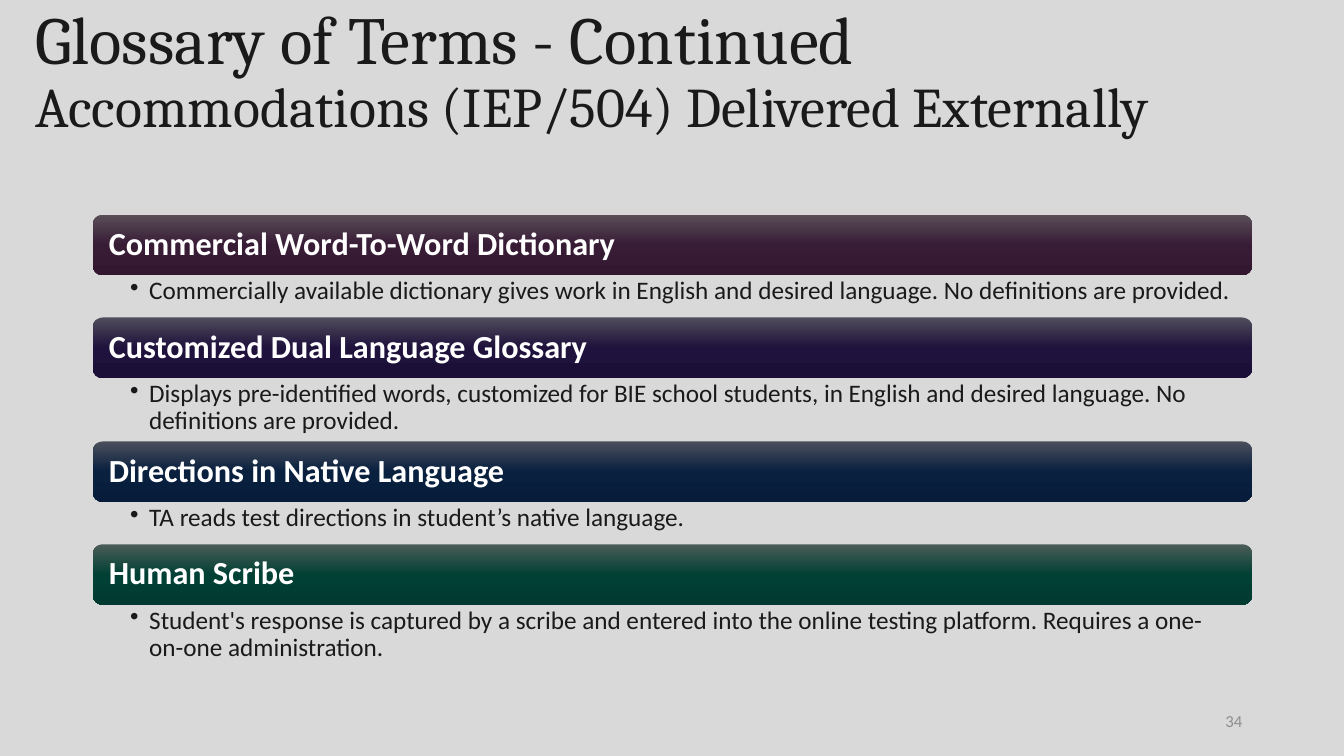
"""Builds the glossary slide on externally delivered accommodations."""
from copy import deepcopy

from lxml import etree
from pptx import Presentation
from pptx import util as u
from pptx.dml.color import RGBColor
from pptx.enum import shapes, text
from pptx.oxml.ns import qn

INK = "1A1A1A"
BAR_HEIGHT = 60
TERMS = [
    ("Commercial Word-To-Word Dictionary",
     "Commercially available dictionary gives work in English and desired language. "
     "No definitions are provided.", 42, ("594E58", "381C36", "331731")),
    ("Customized Dual Language Glossary",
     "Displays pre-identified words, customized for BIE school students, in English "
     "and desired language. No definitions are provided.", 63, ("4F4C5B", "1F123C", "1B0E37")),
    ("Directions in Native Language",
     "TA reads test directions in student’s native language.", 42,
     ("4B4F5C", "09203F", "061C3A")),
    ("Human Scribe",
     "Student's response is captured by a scribe and entered into the online testing "
     "platform. Requires a one-on-one administration.", 62, ("4B5D57", "014035", "003A30")),
]


def px(length):
    """Turns px, a hundred to the inch, into EMU."""
    return u.Emu(length * 9144)


def color(value):
    """Turns a hex string into a colour."""
    return RGBColor.from_string(value)


def style(span, size, ink, name="Calibri", bold=False):
    """Sets the font of a run."""
    span.font.name, span.font.size, span.font.bold = name, u.Pt(size), bold
    span.font.color.rgb = color(ink)


def set_frame(frame, margins, anchor):
    """Sets wrapping, margins (left, top, right, bottom) and anchor."""
    frame.word_wrap = True
    frame.auto_size = text.MSO_AUTO_SIZE.NONE
    frame.vertical_anchor = anchor
    (frame.margin_left, frame.margin_top,
     frame.margin_right, frame.margin_bottom) = map(px, margins)


def add_bullet(para, indent):
    """Gives a paragraph a hanging bullet."""
    properties = para._p.get_or_add_pPr()
    properties.set("marL", str(px(indent)))
    properties.set("indent", str(-px(indent)))
    etree.SubElement(properties, qn("a:buChar")).set("char", "•")


def fill_gradient(shape, tones):
    """Fills a shape from top to bottom with evenly spaced tones."""
    shape.fill.gradient()
    shape.fill.gradient_angle = 270
    stop_list = shape._element.spPr.find(".//" + qn("a:gsLst"))
    stop_list.append(deepcopy(stop_list[-1]))
    for index, (stop, tone) in enumerate(zip(shape.fill.gradient_stops, tones)):
        stop.position = index / (len(tones) - 1)
        stop.color.rgb = color(tone)


def add_title(page, left, top, width, height):
    """Places the two-line title."""
    title = page.shapes.title
    title.left, title.top, title.width, title.height = map(px, (left, top, width, height))
    set_frame(title.text_frame, (10, 5, 10, 5), text.MSO_ANCHOR.MIDDLE)
    para = title.text_frame.paragraphs[0]
    para.text = "Glossary of Terms - Continued\vAccommodations (IEP/504) Delivered Externally"
    para.alignment = text.PP_ALIGN.LEFT
    para.line_spacing = 0.9
    for span, size in zip(para.runs, (48, 40)):
        style(span, size, INK, "Cambria")


def add_term(page, left, top, width, term, meaning, height, tones):
    """Places a term bar with its meaning below and returns the bottom edge."""
    bar = page.shapes.add_shape(shapes.MSO_SHAPE.ROUNDED_RECTANGLE,
                                *map(px, (left, top, width, BAR_HEIGHT)))
    bar.shadow.inherit = False
    bar.line.fill.background()
    fill_gradient(bar, tones)
    set_frame(bar.text_frame, (13, 13, 13, 13), text.MSO_ANCHOR.MIDDLE)
    para = bar.text_frame.paragraphs[0]
    para.text = term
    para.alignment = text.PP_ALIGN.LEFT
    para.line_spacing = 0.9
    style(para.runs[0], 23, "FFFFFF", bold=True)

    box = page.shapes.add_textbox(*map(px, (left, top + BAR_HEIGHT, width, height)))
    set_frame(box.text_frame, (37, 3, 18, 3), text.MSO_ANCHOR.TOP)
    para = box.text_frame.paragraphs[0]
    para.text = meaning
    add_bullet(para, 19)
    para.line_spacing = 0.9
    style(para.runs[0], 18, INK)
    return top + BAR_HEIGHT + height


def add_glossary(page, left, top, width):
    """Stacks all terms from the top of the given column."""
    for term in TERMS:
        top = add_term(page, left, top, width, *term)


def add_page_number(page, left, top, width, height):
    """Places the page number at the right of its box."""
    box = page.shapes.add_textbox(*map(px, (left, top, width, height)))
    set_frame(box.text_frame, (10, 5, 10, 5), text.MSO_ANCHOR.MIDDLE)
    para = box.text_frame.paragraphs[0]
    para.text = "34"
    para.alignment = text.PP_ALIGN.RIGHT
    style(para.runs[0], 12, "8D8D8D")


def main():
    """Builds and saves the deck."""
    deck = Presentation()
    deck.slide_width, deck.slide_height = px(1333), px(750)
    page = deck.slides.add_slide(deck.slide_layouts.get_by_name("Title Only"))
    page.background.fill.solid()
    page.background.fill.fore_color.rgb = color("D9D9D9")
    add_title(page, 25, 0, 1284, 145)
    add_glossary(page, 92, 213, 1150)
    add_page_number(page, 942, 695, 300, 40)
    deck.save("out.pptx")


if __name__ == "__main__":
    main()
